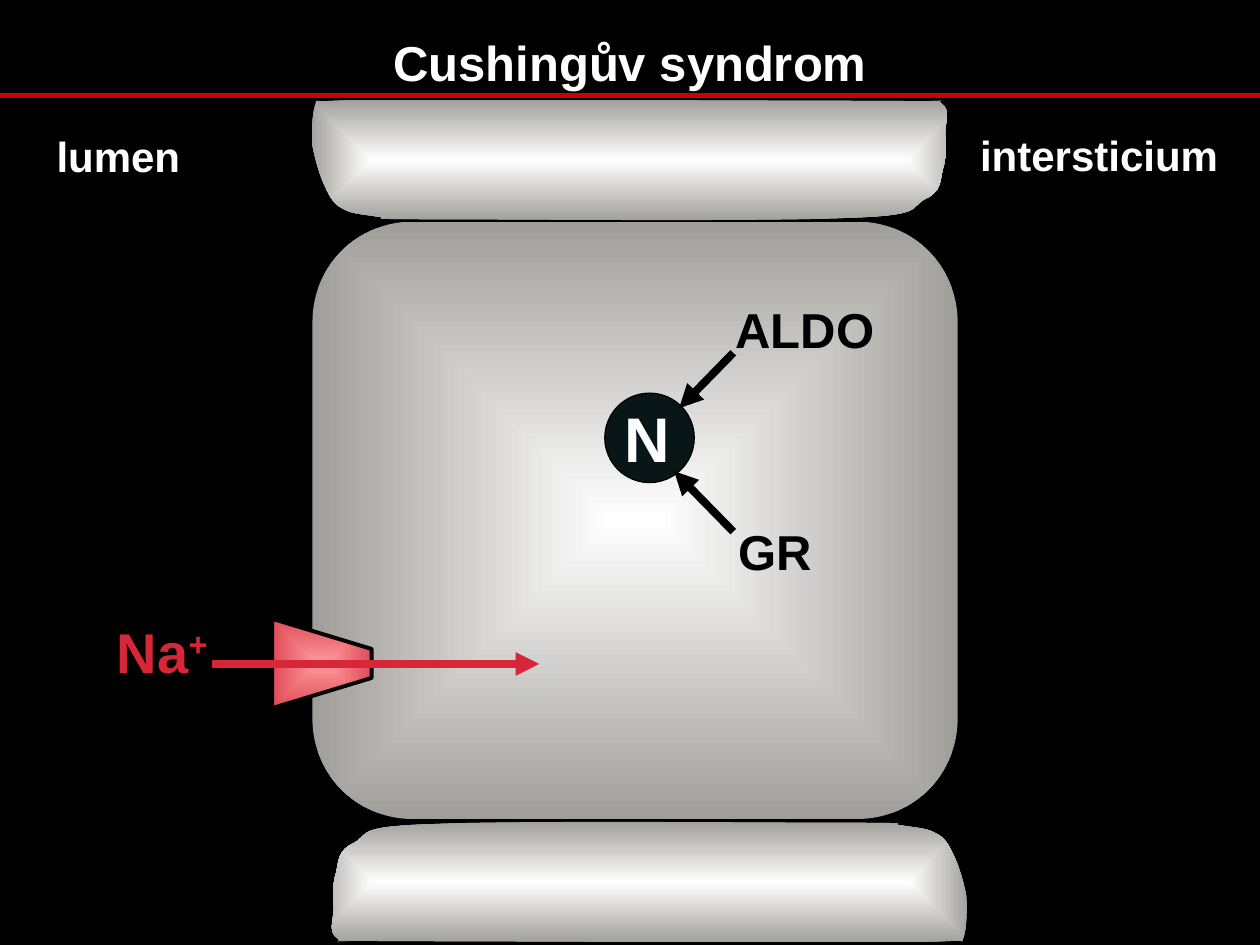
from dataclasses import dataclass

from lxml import etree
from pptx import Presentation
from pptx.dml.color import RGBColor
from pptx.enum import shapes, text
from pptx.oxml import parse_xml
from pptx.oxml.ns import nsdecls, qn
from pptx.util import Inches, Pt


@dataclass(frozen=True)
class Theme:
    font: str = "Arial"
    black: RGBColor = RGBColor(0, 0, 0)
    white: RGBColor = RGBColor(255, 255, 255)
    rule: RGBColor = RGBColor(0xCC, 0, 0)
    sodium: RGBColor = RGBColor(0xD6, 0x26, 0x37)
    nucleus: RGBColor = RGBColor(0x09, 0x16, 0x17)
    cell: tuple = (RGBColor(255, 255, 255), RGBColor(0xA0, 0x9E, 0x9A))
    channel: tuple = (RGBColor(0xFF, 0x99, 0x99), RGBColor(0xDF, 0x4B, 0x59))
    side: int = 24
    heading: int = 28
    ion: int = 32
    letter: int = 36


theme = Theme()


def glow(shape, colors, path):
    """Fill a shape from its centre outwards, without shadow or outline."""
    shape.shadow.inherit = False
    shape.line.fill.background()
    shape.fill.gradient()
    for stop, color in zip(shape.fill.gradient_stops, colors):
        stop.color.rgb = color
    grad = shape._element.spPr.find(qn("a:gradFill"))
    grad.replace(grad.find(qn("a:lin")), parse_xml(
        f'<a:path {nsdecls("a")} path="{path}"><a:fillToRect '
        'l="50000" t="50000" r="50000" b="50000"/></a:path>'))


def write(box, words, size, color, align=text.PP_ALIGN.LEFT):
    """Put bold words in a box; a second word is set as superscript."""
    frame = box.text_frame
    frame.word_wrap = True
    frame.auto_size = text.MSO_AUTO_SIZE.SHAPE_TO_FIT_TEXT
    frame.vertical_anchor = text.MSO_ANCHOR.TOP
    paragraph = frame.paragraphs[0]
    paragraph.alignment = align
    for index, word in enumerate(words):
        run = paragraph.add_run()
        run.text = word
        run.font.name, run.font.size, run.font.bold = theme.font, Pt(size), True
        run.font.color.rgb = color
        if index:
            run._r.get_or_add_rPr().set("baseline", "30000")


prs = Presentation()
prs.slide_width, prs.slide_height = Inches(10), Inches(7.5)
slide = prs.slides.add_slide(prs.slide_layouts[5])
slide.background.fill.solid()
slide.background.fill.fore_color.rgb = theme.black

title = slide.shapes.title
title.left, title.top = Inches(0), Inches(0.21)
title.width, title.height = Inches(10), Inches(0.57)
write(title, ["Cushingův syndrom"], theme.heading, theme.white, text.PP_ALIGN.CENTER)

# Main cell and nucleus
cell = slide.shapes.add_shape(shapes.MSO_SHAPE.ROUNDED_RECTANGLE,
                              Inches(2.48), Inches(1.76), Inches(5.12), Inches(4.74))
cell.adjustments[0] = 0.167
glow(cell, theme.cell, "shape")

nucleus = slide.shapes.add_shape(shapes.MSO_SHAPE.OVAL,
                                 Inches(4.8), Inches(3.12), Inches(0.71), Inches(0.71))
nucleus.shadow.inherit = False
nucleus.fill.solid()
nucleus.fill.fore_color.rgb = theme.nucleus
nucleus.line.color.rgb = theme.black
nucleus.line.width = Pt(0.75)

# Neighbouring cells share one outline: a start, then three points for each curve
neighbour = [
    (3.45, 6.54),
    (2.8, 6.56), (2.94, 6.62), (2.81, 6.69),
    (2.68, 6.75), (2.69, 6.83), (2.67, 6.92),
    (2.64, 7.01), (2.64, 7.12), (2.65, 7.21),
    (2.65, 7.29), (2.6, 7.4), (2.68, 7.45),
    (2.75, 7.49), (2.47, 7.46), (3.1, 7.47),
    (3.74, 7.47), (5.76, 7.48), (6.49, 7.48),
    (7.22, 7.48), (7.32, 7.48), (7.51, 7.47),
    (7.7, 7.46), (7.62, 7.49), (7.65, 7.43),
    (7.67, 7.37), (7.68, 7.22), (7.67, 7.11),
    (7.65, 7.01), (7.61, 6.87), (7.57, 6.79),
    (7.53, 6.7), (7.49, 6.64), (7.42, 6.61),
    (7.35, 6.57), (7.26, 6.57), (7.15, 6.55),
    (7.03, 6.54), (7.35, 6.53), (6.73, 6.53),
    (6.12, 6.53), (4.11, 6.51), (3.45, 6.54),
]
channel = [(2.2, 4.87), (2.44, 5.66), (2.67, 5.66), (2.91, 4.87)]

for outline, x, y, turn, colors, path in [
    (channel, 2.2, 4.87, 270, theme.channel, "shape"),
    (neighbour, 2.47, 6.51, 0, theme.cell, "rect"),
    (neighbour, 2.45, 0.78, 180, theme.cell, "rect"),
]:
    points = [(Inches(px), Inches(py)) for px, py in outline]
    builder = slide.shapes.build_freeform(*points[0])
    builder.add_line_segments(points[1:], close=True)
    part = builder.convert_to_shape()
    part.left, part.top, part.rotation = Inches(x), Inches(y), turn
    glow(part, colors, path)
    if outline is channel:
        part.line.color.rgb = theme.black
        part.line.width = Pt(2.25)
    else:
        segments = list(part._element.spPr.iter(qn("a:lnTo")))
        for first in range(0, len(segments), 3):
            curve = etree.Element(qn("a:cubicBezTo"))
            segments[first].addprevious(curve)
            for segment in segments[first:first + 3]:
                curve.append(segment[0])
                segment.getparent().remove(segment)

# Title rule and arrows
for x1, y1, x2, y2, color, width, arrow in [
    (0, 0.76, 10, 0.76, theme.rule, 3, False),
    (5.82, 2.8, 5.39, 3.24, theme.black, 4.5, True),
    (5.82, 4.22, 5.35, 3.74, theme.black, 4.5, True),
    (1.68, 5.27, 4.28, 5.27, theme.sodium, 4.5, True),
]:
    line = slide.shapes.add_connector(shapes.MSO_CONNECTOR.STRAIGHT,
                                      Inches(x1), Inches(y1), Inches(x2), Inches(y2))
    line.line.color.rgb = color
    line.line.width = Pt(width)
    if arrow:
        etree.SubElement(line.line._get_or_add_ln(), qn("a:tailEnd"), type="triangle")
    etree.SubElement(line._element.spPr, qn("a:effectLst"))

# Labels
for x, y, w, h, words, size, color in [
    (4.86, 3.12, 0.39, 0.7, ["N"], theme.letter, theme.white),
    (5.74, 2.33, 1.34, 0.57, ["ALDO"], theme.heading, theme.black),
    (5.76, 4.09, 1.34, 0.57, ["GR"], theme.heading, theme.black),
    (0.83, 4.85, 1.02, 0.63, ["Na", "+"], theme.ion, theme.sodium),
    (0.35, 0.99, 1.65, 0.5, ["lumen"], theme.side, theme.white),
    (7.68, 0.98, 2.28, 0.5, ["intersticium"], theme.side, theme.white),
]:
    label = slide.shapes.add_textbox(Inches(x), Inches(y), Inches(w), Inches(h))
    write(label, words, size, color)

prs.save("out.pptx")
